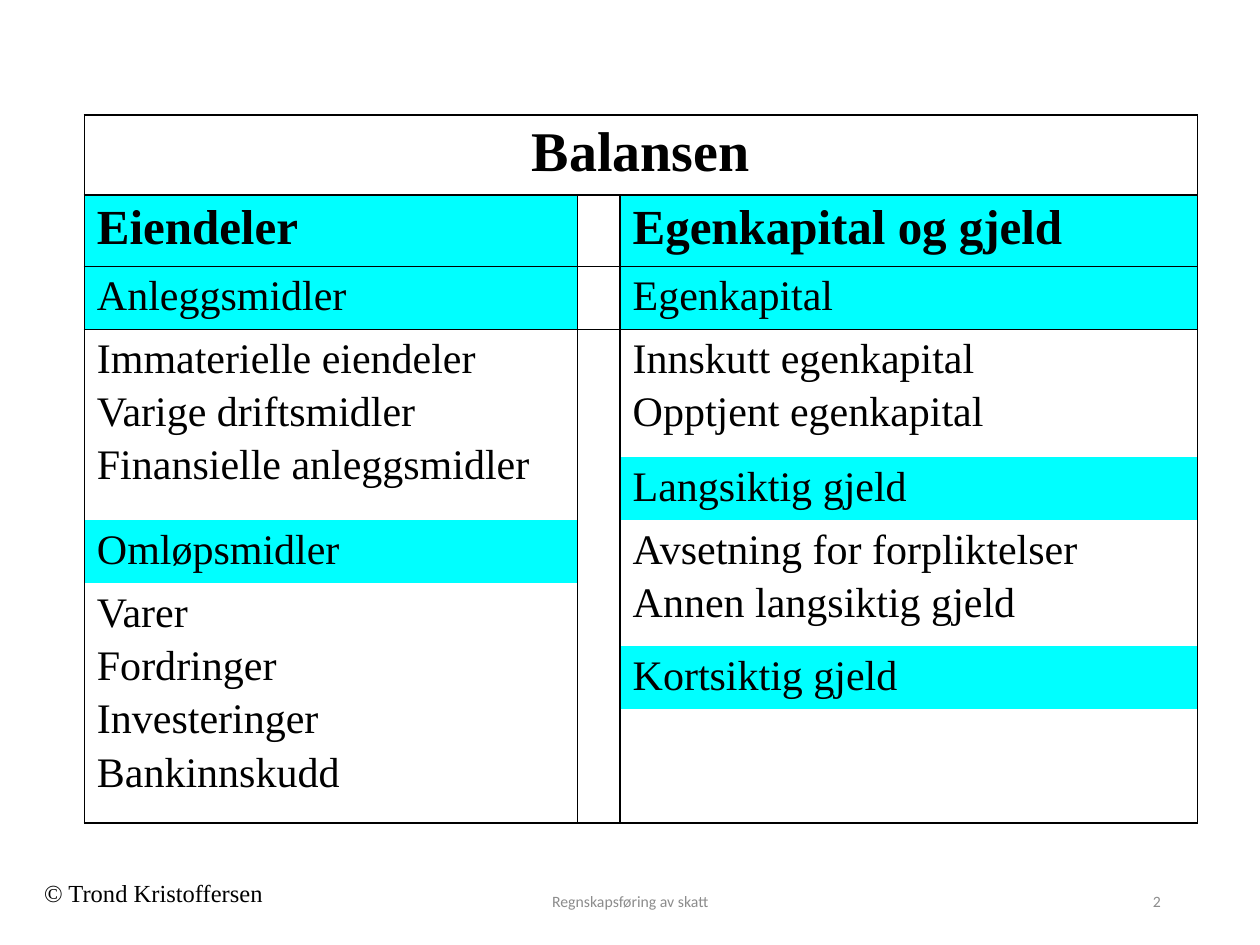
from lxml.etree import SubElement
from pptx import Presentation
from pptx.dml.color import RGBColor
from pptx.enum.text import MSO_ANCHOR, PP_ALIGN
from pptx.oxml.ns import qn
from pptx.util import Cm, Pt

SERIF, SANS = "Times New Roman", "Calibri"
BLACK, CYAN, GREY = "000000", "00FFFF", "8C8C8C"
NO_STYLE = "{2D5ABB26-0587-4C30-8999-92F81FD0307C}"

# Table content: row, column, rows spanned, columns spanned, fill, lines
CELLS = [
    (0, 0, 1, 4, None, ["Balansen"]),
    (1, 0, 1, 1, CYAN, ["Eiendeler"]),
    (1, 2, 1, 2, CYAN, ["Egenkapital og gjeld"]),
    (2, 0, 1, 1, CYAN, ["Anleggsmidler"]),
    (2, 2, 1, 2, CYAN, ["Egenkapital"]),
    (3, 0, 2, 1, None, ["Immaterielle eiendeler", "Varige driftsmidler",
                        "Finansielle anleggsmidler"]),
    (3, 2, 1, 1, None, ["Innskutt egenkapital", "Opptjent egenkapital"]),
    (4, 2, 1, 1, CYAN, ["Langsiktig gjeld"]),
    (4, 3, 1, 1, CYAN, []),
    (5, 0, 1, 1, CYAN, ["Omløpsmidler"]),
    (5, 2, 2, 1, None, ["Avsetning for forpliktelser", "Annen langsiktig gjeld"]),
    (6, 0, 3, 1, None, ["Varer", "Fordringer", "Investeringer", "Bankinnskudd"]),
    (7, 2, 1, 1, CYAN, ["Kortsiktig gjeld"]),
    (7, 3, 1, 1, CYAN, []),
]
COLUMN_WIDTHS = [9.94, 0.86, 10.59, 1.05]
ROW_HEIGHTS = [1.61, 1.44, 1.27, 2.58, 1.27, 1.27, 1.27, 1.27, 2.29]
HEADING_SIZES = {0: 32, 1: 28}  # other rows use 24 points
RULED_ROW_EDGES = {0, 1, 2, len(ROW_HEIGHTS)}
RULED_COLUMN_EDGES = {0, 1, len(COLUMN_WIDTHS)}

# Footer: place, text, font, size, colour, alignment, anchor
LABELS = [
    ((0.64, 17.58, 5.28, 0.84), "© Trond Kristoffersen",
     SERIF, 14, BLACK, PP_ALIGN.LEFT, MSO_ANCHOR.TOP),
    ((8.41, 17.65, 8.59, 1.02), "Regnskapsføring av skatt",
     SANS, 9, GREY, PP_ALIGN.CENTER, MSO_ANCHOR.MIDDLE),
    ((17.93, 17.65, 5.72, 1.02), "2",
     SANS, 9, GREY, PP_ALIGN.RIGHT, MSO_ANCHOR.MIDDLE),
]


def colour(value):
    return RGBColor.from_string(value)


def style(paragraph, font_name, size, hex_colour, bold=False, align=PP_ALIGN.LEFT):
    paragraph.alignment = align
    font = paragraph.font
    font.name, font.size, font.bold = font_name, Pt(size), bold
    font.color.rgb = colour(hex_colour)


def add_borders(cell, row, column):
    """Rule the sides of a cell that lie on a ruled edge of the grid."""
    if row == 0 and cell.is_spanned:
        return
    sides = {
        "a:lnL": column in RULED_COLUMN_EDGES,
        "a:lnR": column + cell.span_width in RULED_COLUMN_EDGES,
        "a:lnT": row in RULED_ROW_EDGES,
        "a:lnB": row + cell.span_height in RULED_ROW_EDGES,
    }
    properties = cell._tc.get_or_add_tcPr()
    for tag, ruled in sides.items():
        if ruled:
            line = SubElement(properties, qn(tag), w=str(Pt(1)))
            fill = SubElement(line, qn("a:solidFill"))
            SubElement(fill, qn("a:srgbClr"), val=BLACK)


def add_balance_sheet(page):
    frame = page.shapes.add_table(
        len(ROW_HEIGHTS), len(COLUMN_WIDTHS), Cm(1.7), Cm(2.32),
        Cm(sum(COLUMN_WIDTHS)), Cm(sum(ROW_HEIGHTS)))
    table = frame.table
    table.first_row = table.horz_banding = False
    table._tbl.tblPr.find(qn("a:tableStyleId")).text = NO_STYLE
    for column, width in zip(table.columns, COLUMN_WIDTHS):
        column.width = Cm(width)
    for row, height in zip(table.rows, ROW_HEIGHTS):
        row.height = Cm(height)

    # Merges and text
    fills = {}
    for row, column, height, width, fill, lines in CELLS:
        cell = table.cell(row, column)
        if height * width > 1:
            cell.merge(table.cell(row + height - 1, column + width - 1))
        fills[row, column] = fill
        if lines:
            cell.text = "\n".join(lines)
        for index, paragraph in enumerate(cell.text_frame.paragraphs):
            style(paragraph, SERIF, HEADING_SIZES.get(row, 24), BLACK,
                  row in HEADING_SIZES,
                  PP_ALIGN.CENTER if row == 0 else PP_ALIGN.LEFT)
            if index:
                paragraph.space_before = Pt(4)

    # Borders and fills
    for row in range(len(ROW_HEIGHTS)):
        for column in range(len(COLUMN_WIDTHS)):
            cell = table.cell(row, column)
            add_borders(cell, row, column)
            if fills.get((row, column)):
                cell.fill.solid()
                cell.fill.fore_color.rgb = colour(fills[row, column])
            else:
                cell.fill.background()


def add_label(page, place, text, font_name, size, hex_colour, align, anchor):
    box = page.shapes.add_textbox(*(Cm(length) for length in place))
    frame = box.text_frame
    frame.word_wrap = True
    frame.vertical_anchor = anchor
    paragraph = frame.paragraphs[0]
    paragraph.text = text
    style(paragraph, font_name, size, hex_colour, align=align)


def main():
    deck = Presentation()
    deck.slide_width, deck.slide_height = Cm(25.4), Cm(19.05)
    page = deck.slides.add_slide(deck.slide_layouts[6])
    add_balance_sheet(page)
    for label in LABELS:
        add_label(page, *label)
    deck.save("out.pptx")


if __name__ == "__main__":
    main()
